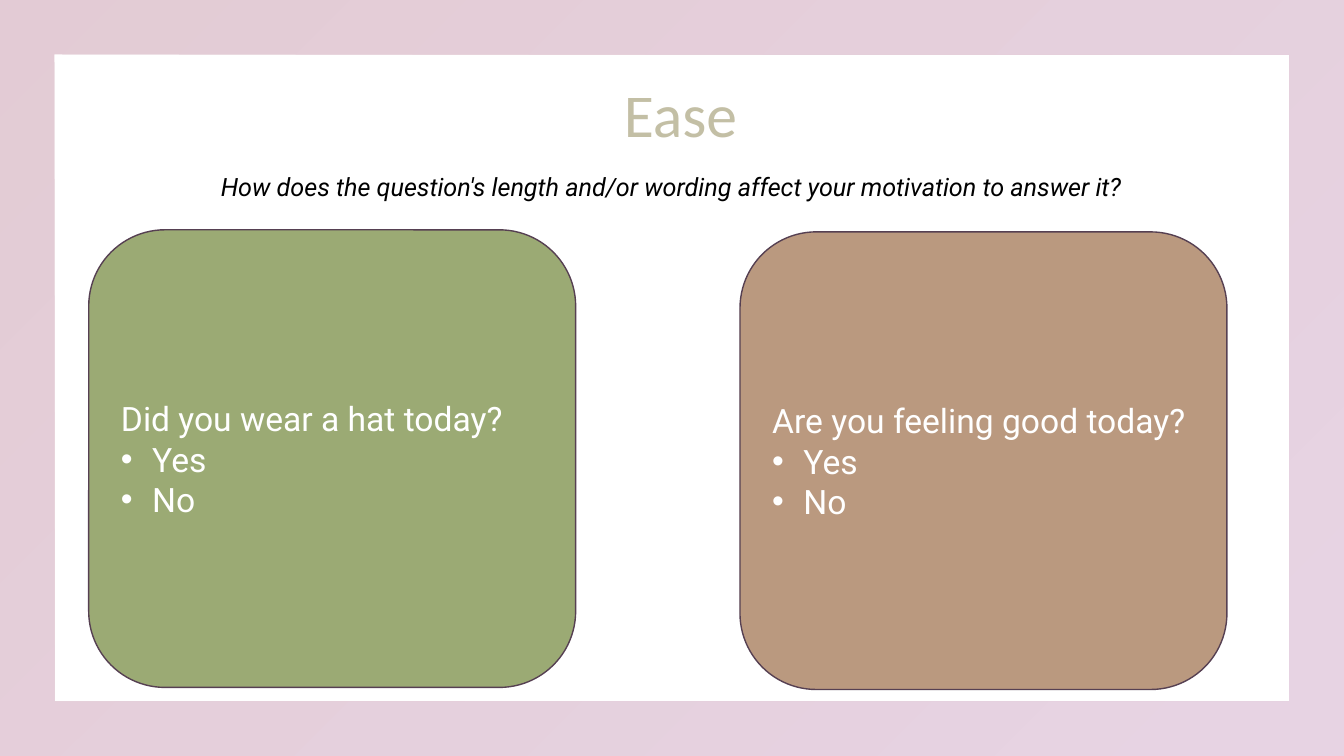
from lxml import etree
from pptx import Presentation
from pptx import util as u
from pptx.dml.color import RGBColor
from pptx.enum import shapes, text
from pptx.oxml.ns import qn

WHITE = RGBColor(0xFF, 0xFF, 0xFF)
BLACK = RGBColor(0, 0, 0)
ROSE = RGBColor(0xBA, 0x7F, 0x96)
LILAC = RGBColor(0xC4, 0x93, 0xBB)
KHAKI = RGBColor(0xAA, 0xA4, 0x80)
GREEN = RGBColor(0x9B, 0xAA, 0x74)
TAN = RGBColor(0xBA, 0x99, 0x7F)
PLUM = RGBColor(0x56, 0x40, 0x52)


def set_opacity(element, percent):
    for color in element.iter(qn("a:srgbClr")):
        etree.SubElement(color, qn("a:alpha")).set("val", str(percent * 1000))


class SlideBuilder:
    body_font = "Roboto"
    title_font = "Calibri"
    bullet_indent = u.Inches(0.31)

    def __init__(self, presentation):
        self.width = presentation.slide_width
        self.height = presentation.slide_height
        self.slide = presentation.slides.add_slide(presentation.slide_layouts[6])

    def place(self, left, top, width, height):
        return (
            int(self.width * left / 100),
            int(self.height * top / 100),
            int(self.width * width / 100),
            int(self.height * height / 100),
        )

    def shape(self, kind, box, fill=None):
        shape = self.slide.shapes.add_shape(kind, *self.place(*box))
        shape.shadow.inherit = False
        shape.line.fill.background()
        if fill is not None:
            shape.fill.solid()
            shape.fill.fore_color.rgb = fill
        return shape

    def frame(self, thickness, colors, opacity):
        shape = self.shape(shapes.MSO_SHAPE.FRAME, (0, 0, 100, 100))
        shape.adjustments[0] = thickness
        shape.fill.gradient()
        shape.fill.gradient_angle = 315
        for stop, color in zip(shape.fill.gradient_stops, colors):
            stop.color.rgb = color
        set_opacity(shape.fill._xPr.find(qn("a:gradFill")), opacity)

    def run(self, paragraph, words, size, color, font=body_font, italic=False):
        run = paragraph.add_run()
        run.text = words
        run.font.name = font
        run.font.size = u.Pt(size)
        run.font.color.rgb = color
        run.font.italic = italic
        return run

    def text_box(self, box, anchor):
        frame = self.slide.shapes.add_textbox(*self.place(*box)).text_frame
        frame.word_wrap = True
        frame.vertical_anchor = anchor
        frame.paragraphs[0].alignment = text.PP_ALIGN.CENTER
        return frame

    def title(self, box, words):
        paragraph = self.text_box(box, text.MSO_ANCHOR.BOTTOM).paragraphs[0]
        paragraph.line_spacing = 0.9
        run = self.run(paragraph, words, 44, KHAKI, self.title_font)
        set_opacity(run.font._element, 70)

    def subtitle(self, box, words):
        frame = self.text_box(box, text.MSO_ANCHOR.TOP)
        frame.auto_size = text.MSO_AUTO_SIZE.SHAPE_TO_FIT_TEXT
        self.run(frame.paragraphs[0], words, 18, BLACK, italic=True)

    def bullet(self, paragraph):
        properties = paragraph._p.get_or_add_pPr()
        properties.set("marL", str(self.bullet_indent))
        properties.set("indent", str(-self.bullet_indent))
        etree.SubElement(properties, qn("a:buFont")).set("typeface", "Arial")
        etree.SubElement(properties, qn("a:buChar")).set("char", "•")

    def question_card(self, box, fill, question, answers):
        card = self.shape(shapes.MSO_SHAPE.ROUNDED_RECTANGLE, box, fill)
        card.line.color.rgb = PLUM
        card.line.width = u.Pt(1)
        frame = card.text_frame
        frame.word_wrap = True
        frame.vertical_anchor = text.MSO_ANCHOR.MIDDLE
        for index, words in enumerate((question, *answers)):
            paragraph = frame.add_paragraph() if index else frame.paragraphs[0]
            paragraph.alignment = text.PP_ALIGN.LEFT
            if index:
                self.bullet(paragraph)
            self.run(paragraph, words, 24, WHITE)


def main():
    presentation = Presentation()
    presentation.slide_width = u.Inches(13.33)
    presentation.slide_height = u.Inches(7.5)

    builder = SlideBuilder(presentation)
    builder.shape(shapes.MSO_SHAPE.RECTANGLE, (0, 0, 100, 100), WHITE)
    builder.frame(0.072, (ROSE, LILAC), 40)
    builder.title((5.55, 8.53, 90.17, 12.13), "Ease")
    builder.subtitle(
        (4.73, 22, 90.47, 5.33),
        "How does the question's length and/or wording affect your motivation to answer it?",
    )
    cards = (
        (6.6, 30.4, GREEN, "Did you wear a hat today?"),
        (55.06, 30.67, TAN, "Are you feeling good today?"),
    )
    for left, top, fill, question in cards:
        builder.question_card((left, top, 36.23, 60.53), fill, question, ("Yes", "No"))

    presentation.save("out.pptx")


if __name__ == "__main__":
    main()
